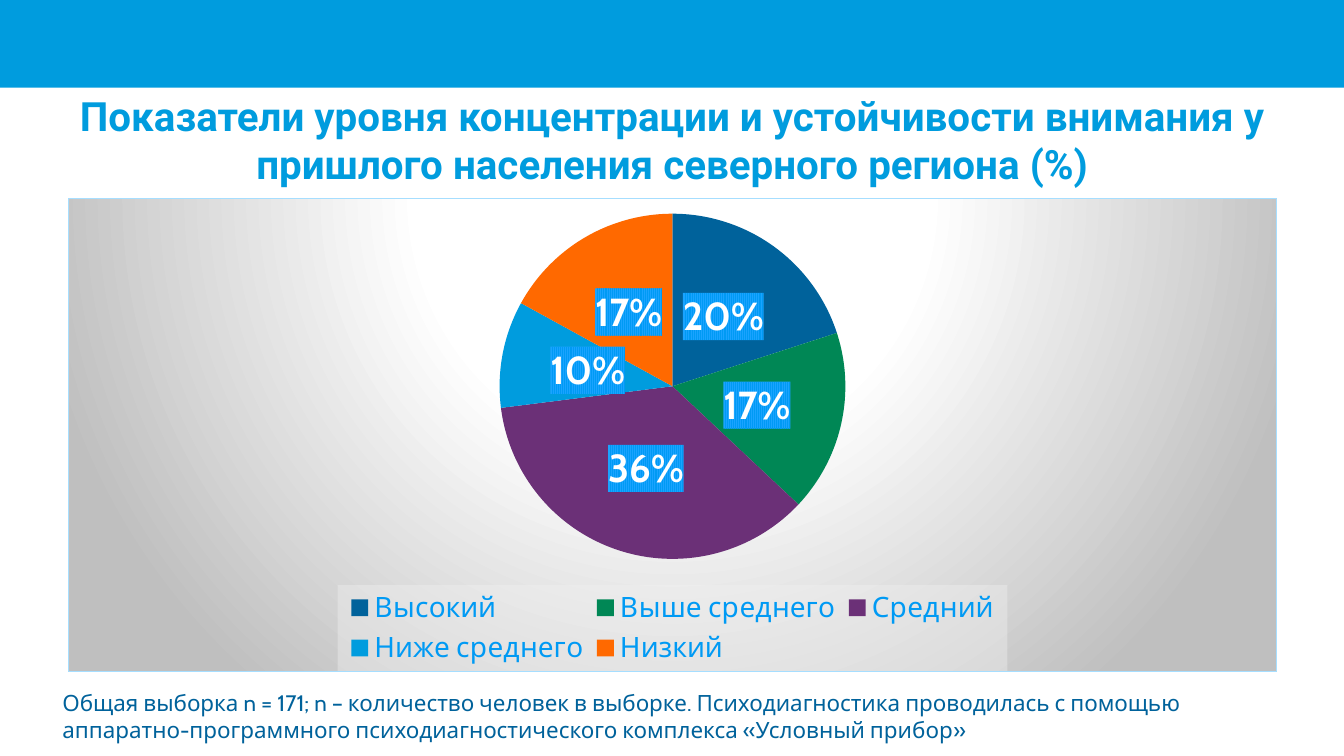
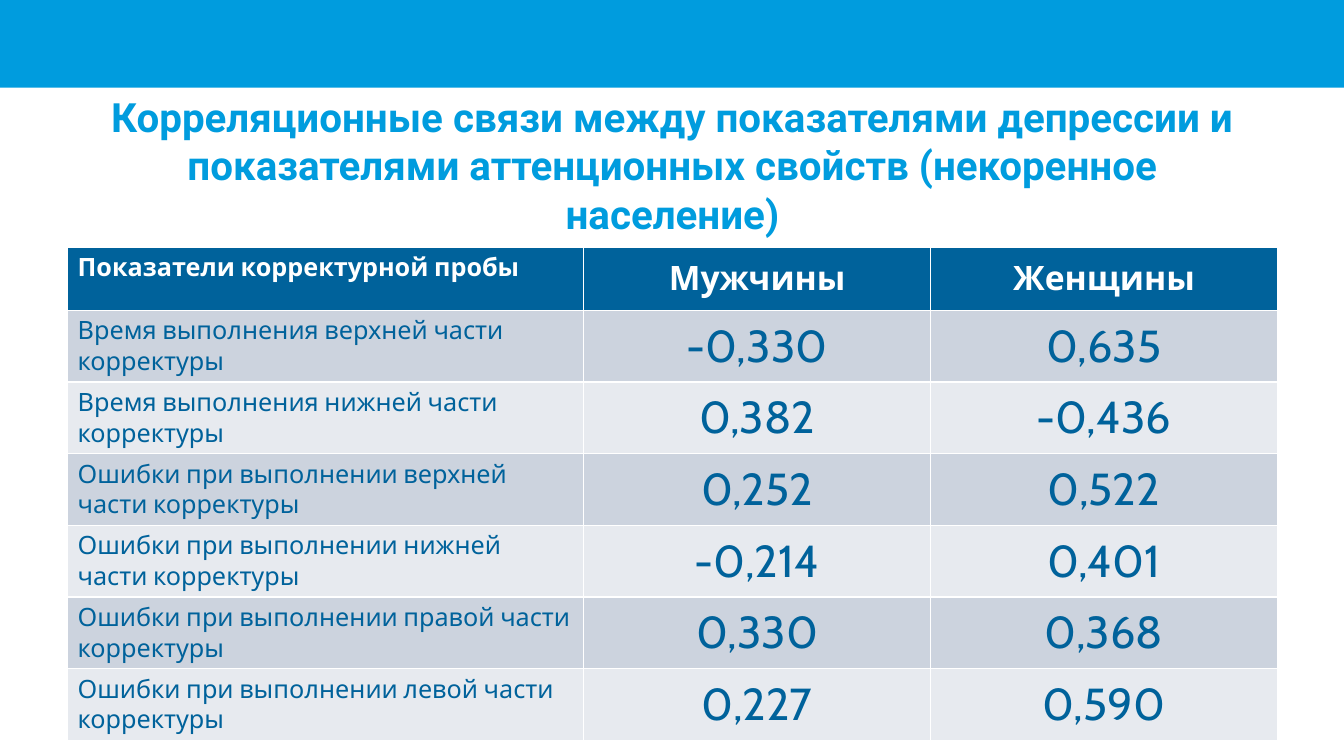
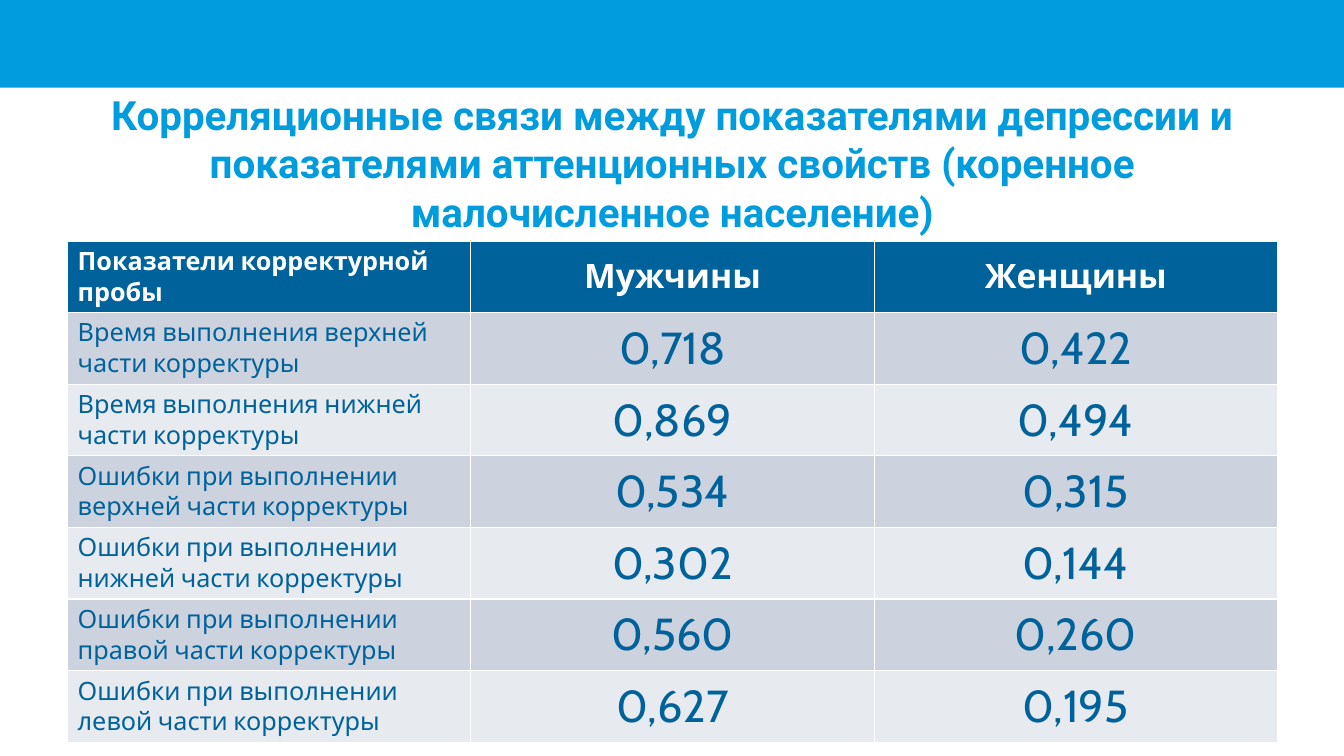
from pptx import Presentation
from pptx import oxml
from pptx.chart import data
from pptx.dml import color as dml
from pptx.enum import chart as charts, shapes, text
from pptx.oxml import ns
from pptx.util import Inches, Pt

BLUE, NAVY, WHITE = "009CDE", "00629B", "FFFFFF"
BANDS = ["E7EAEF", "CCD3DE"]


def rgb(value):
    return dml.RGBColor.from_string(value)


def write(frame, wording, size, hue, font="Cabin", bold=False, align=text.PP_ALIGN.LEFT):
    para = frame.paragraphs[0]
    para.alignment = align
    span = para.add_run()
    span.text = wording
    span.font.name = font
    span.font.size = Pt(size)
    span.font.bold = bold
    span.font.color.rgb = rgb(hue)


deck = Presentation()
deck.slide_width = Inches(13.33)
deck.slide_height = Inches(7.5)
layout = deck.slide_layouts[5]

titles = [
    ("Показатели уровня концентрации и устойчивости внимания у пришлого населения северного региона (%)", 0.93, 0.9),
    ("Корреляционные связи между показателями депрессии и показателями аттенционных свойств (некоренное население)", 0.96, 1.35),
    ("Корреляционные связи между показателями депрессии и показателями аттенционных свойств (коренное малочисленное население)", 0.97, 1.29),
]
pages = []
for wording, top, height in titles:
    page = deck.slides.add_slide(layout)
    title = page.shapes.title
    title.left, title.top, title.width, title.height = Inches(0.67), Inches(top), Inches(12), Inches(height)
    title.text_frame.auto_size = text.MSO_AUTO_SIZE.NONE
    title.text_frame.vertical_anchor = text.MSO_ANCHOR.MIDDLE
    write(title.text_frame, wording, 28.8, BLUE, "Roboto", True, text.PP_ALIGN.CENTER)
    pages.append(page)

band = pages[0].shapes.add_shape(shapes.MSO_SHAPE.RECTANGLE, 0, 0, deck.slide_width, Inches(0.87))
band.shadow.inherit = False
band.fill.solid()
band.fill.fore_color.rgb = rgb(BLUE)
band.line.fill.background()
layout.shapes.element.insert(2, band.element)

levels = data.CategoryChartData(number_format="0")
levels.categories = ["Высокий", "Выше среднего", "Средний", "Ниже среднего", "Низкий"]
levels.add_series("Series 1", [20, 17, 36, 10, 17])
chart = pages[0].shapes.add_chart(
    charts.XL_CHART_TYPE.PIE, Inches(0.67), Inches(1.96), Inches(12), Inches(4.71), levels
).chart
chart.has_title = False
chart.font.name = "Cabin"
chart.font.size = Pt(10)
chart.font.color.rgb = rgb(NAVY)

chart.has_legend = True
legend = chart.legend
legend.position = charts.XL_LEGEND_POSITION.BOTTOM
legend.include_in_layout = False
legend.font.name = "Cabin"
legend.font.size = Pt(20)
legend.font.color.rgb = rgb("009AF4")

pie = chart.plots[0]
pie.vary_by_categories = True
for index, hue in enumerate([NAVY, "008755", "6B3077", BLUE, "FF6900"]):
    slice_fill = pie.series[0].points[index].format.fill
    slice_fill.solid()
    slice_fill.fore_color.rgb = rgb(hue)

pie.has_data_labels = True
labels = pie.data_labels
labels.show_percentage = True
labels.show_value = False
labels.number_format = "0%"
labels.number_format_is_linked = False
labels.position = charts.XL_LABEL_POSITION.CENTER
labels.font.name = "Cabin"
labels.font.size = Pt(28)
labels.font.bold = True
labels.font.color.rgb = rgb(WHITE)

backgrounds = [
    (".", '<a:gradFill><a:gsLst><a:gs pos="0"><a:srgbClr val="FFFFFF"/></a:gs>'
          '<a:gs pos="39000"><a:srgbClr val="FFFFFF"/></a:gs>'
          '<a:gs pos="100000"><a:srgbClr val="BFBFBF"/></a:gs></a:gsLst>'
          '<a:path path="circle"><a:fillToRect l="50000" t="-80000" r="50000" b="180000"/></a:path></a:gradFill>'
          '<a:ln w="9525"><a:solidFill><a:srgbClr val="A6DEFF"/></a:solidFill></a:ln>'),
    (".//c:legend", '<a:solidFill><a:srgbClr val="F2F2F2"><a:alpha val="39000"/></a:srgbClr></a:solidFill>'),
    (".//c:dLbls", '<a:pattFill prst="narVert"><a:fgClr><a:srgbClr val="009AF4"/></a:fgClr>'
                   '<a:bgClr><a:srgbClr val="1AA3FF"/></a:bgClr></a:pattFill>'),
]
for where, paint in backgrounds:
    part = chart.element.xpath(where)[0]
    look = oxml.parse_xml(f'<c:spPr {ns.nsdecls("c", "a")}>{paint}</c:spPr>')
    part.find(ns.qn("c:txPr")).addprevious(look)

placements = [
    (".//c:plotArea", 0, '<c:layoutTarget val="inner"/>', (0.357, 0.033, 0.286, 0.729)),
    (".//c:legend", 1, "", (0.223, 0.817, 0.554, 0.181)),
]
for where, position, target, shares in placements:
    part = chart.element.xpath(where)[0]
    for old in part.findall(ns.qn("c:layout")):
        part.remove(old)
    modes = '<c:xMode val="edge"/><c:yMode val="edge"/>'
    sizes = "".join(f'<c:{key} val="{share}"/>' for key, share in zip("xywh", shares))
    part.insert(position, oxml.parse_xml(
        f'<c:layout {ns.nsdecls("c")}><c:manualLayout>{target}{modes}{sizes}</c:manualLayout></c:layout>'))

note = pages[0].shapes.add_textbox(Inches(0.52), Inches(6.79), Inches(12.28), Inches(0.7))
note.text_frame.word_wrap = True
write(note.text_frame, "Общая выборка n = 171; n – количество человек в выборке. Психодиагностика проводилась с помощью аппаратно-программного психодиагностического комплекса «Условный прибор»", 16, NAVY)

heading = ("Показатели корректурной пробы", "Мужчины", "Женщины")
measures = [
    "Время выполнения верхней части корректуры",
    "Время выполнения нижней части корректуры",
    "Ошибки при выполнении верхней части корректуры",
    "Ошибки при выполнении нижней части корректуры",
    "Ошибки при выполнении правой части корректуры",
    "Ошибки при выполнении левой части корректуры",
]
newcomers = (
    ["-0,330", "0,382", "0,252", "-0,214", "0,330", "0,227"],
    ["0,635", "-0,436", "0,522", "0,401", "0,368", "0,590"],
)
natives = (
    ["0,718", "0,869", "0,534", "0,302", "0,560", "0,627"],
    ["0,422", "0,494", "0,315", "0,144", "0,260", "0,195"],
)
tables = [
    (pages[1], newcomers, 2.45, [5.12, 3.44, 3.44], 0.63),
    (pages[2], natives, 2.39, [4, 4, 4], 0.7),
]
for page, (men, women), top, widths, head_height in tables:
    rows = [heading, *zip(measures, men, women)]
    heights = [head_height] + [0.71] * len(measures)
    grid = page.shapes.add_table(
        len(rows), len(widths), Inches(0.67), Inches(top), Inches(12), Inches(sum(heights))
    ).table
    for column, width in zip(grid.columns, widths):
        column.width = Inches(width)
    for r, (row, height) in enumerate(zip(rows, heights)):
        grid.rows[r].height = Inches(height)
        for c, wording in enumerate(row):
            cell = grid.cell(r, c)
            cell.fill.solid()
            cell.fill.fore_color.rgb = rgb(BANDS[r % 2] if r else NAVY)
            size, align = 18, text.PP_ALIGN.LEFT
            if c:
                size, align = 32 if r else 24, text.PP_ALIGN.CENTER
                cell.vertical_anchor = text.MSO_ANCHOR.MIDDLE
            write(cell.text_frame, wording, size, NAVY if r else WHITE, bold=r == 0, align=align)

deck.save("out.pptx")
